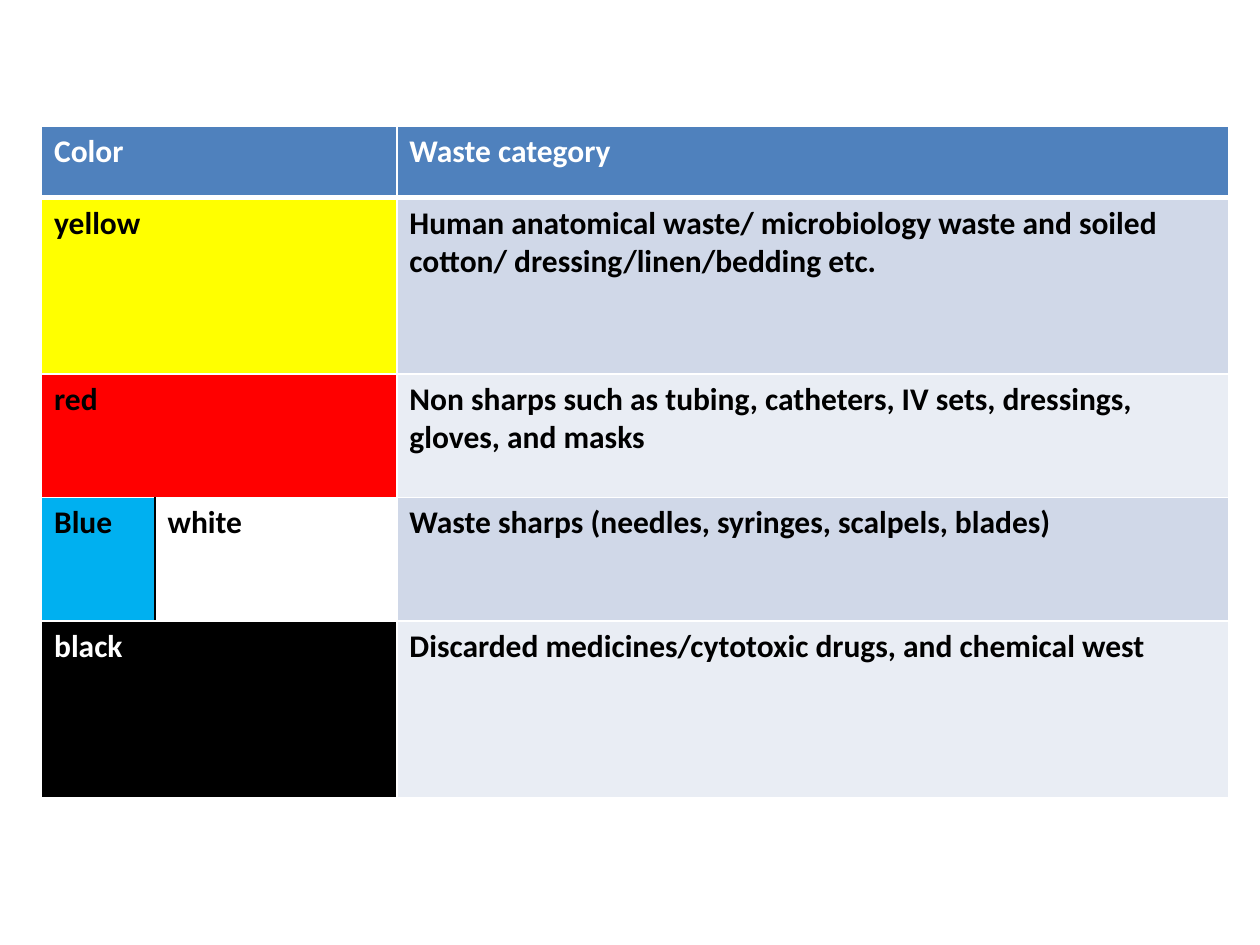
from lxml.etree import SubElement
from pptx import Presentation
from pptx.dml.color import RGBColor
from pptx.oxml.ns import qn
from pptx.util import Inches, Pt

COLORS = {
    "header": "4F81BD",
    "yellow": "FFFF00",
    "red": "FF0000",
    "blue": "00B0F0",
    "white": "FFFFFF",
    "black": "000000",
    "dark band": "D0D8E8",
    "light band": "E9EDF4",
}
COLUMN_WIDTHS = [0.9, 1.92, 6.6]
ROWS = [
    (0.57, [("Color", "header", "white"), None,
            ("Waste category", "header", "white")]),
    (1.4, [("yellow", "yellow", "black"), None,
           ("Human anatomical waste/ microbiology waste and soiled cotton/ dressing/linen/bedding etc.",
            "dark band", "black")]),
    (0.98, [("red", "red", "black"), None,
            ("Non sharps such as tubing, catheters, IV sets, dressings, gloves, and masks",
             "light band", "black")]),
    (0.98, [("Blue", "blue", "black"), ("white", "white", "black"),
            ("Waste sharps (needles, syringes, scalpels, blades)", "dark band", "black")]),
    (1.4, [("black", "black", "white"), None,
           ("Discarded medicines/cytotoxic drugs, and chemical west", "light band", "black")]),
]
SPLIT_ROW = 3


def add_border(cell, side, color, width):
    line = SubElement(cell._tc.get_or_add_tcPr(), qn(f"a:ln{side}"), w=str(Pt(width)))
    SubElement(SubElement(line, qn("a:solidFill")), qn("a:srgbClr"), val=COLORS[color])


prs = Presentation()
prs.slide_width, prs.slide_height = Inches(10), Inches(7.5)
slide = prs.slides.add_slide(prs.slide_layouts[6])

waste_table = slide.shapes.add_table(
    len(ROWS), len(COLUMN_WIDTHS), Inches(0.33), Inches(1), Inches(9.42), Inches(5.33)
).table
for column, width in zip(waste_table.columns, COLUMN_WIDTHS):
    column.width = Inches(width)

for r, (height, entries) in enumerate(ROWS):
    waste_table.rows[r].height = Inches(height)
    if entries[1] is None:
        waste_table.cell(r, 0).merge(waste_table.cell(r, 1))
    for c, entry in enumerate(entries):
        cell = waste_table.cell(r, c)
        for side in "LRTB":
            divider = r == SPLIT_ROW and (c, side) in [(0, "R"), (1, "L")]
            under_header = (r, side) in [(0, "B"), (1, "T")]
            add_border(cell, side, "black" if divider else "white", 3 if under_header else 1)
        if entry is None:
            continue
        text, fill, text_color = entry
        cell.fill.solid()
        cell.fill.fore_color.rgb = RGBColor.from_string(COLORS[fill])
        run = cell.text_frame.paragraphs[0].add_run()
        run.text = text
        run.font.name = "Calibri"
        run.font.size = Pt(18)
        run.font.bold = True
        run.font.color.rgb = RGBColor.from_string(COLORS[text_color])

prs.save("out.pptx")
